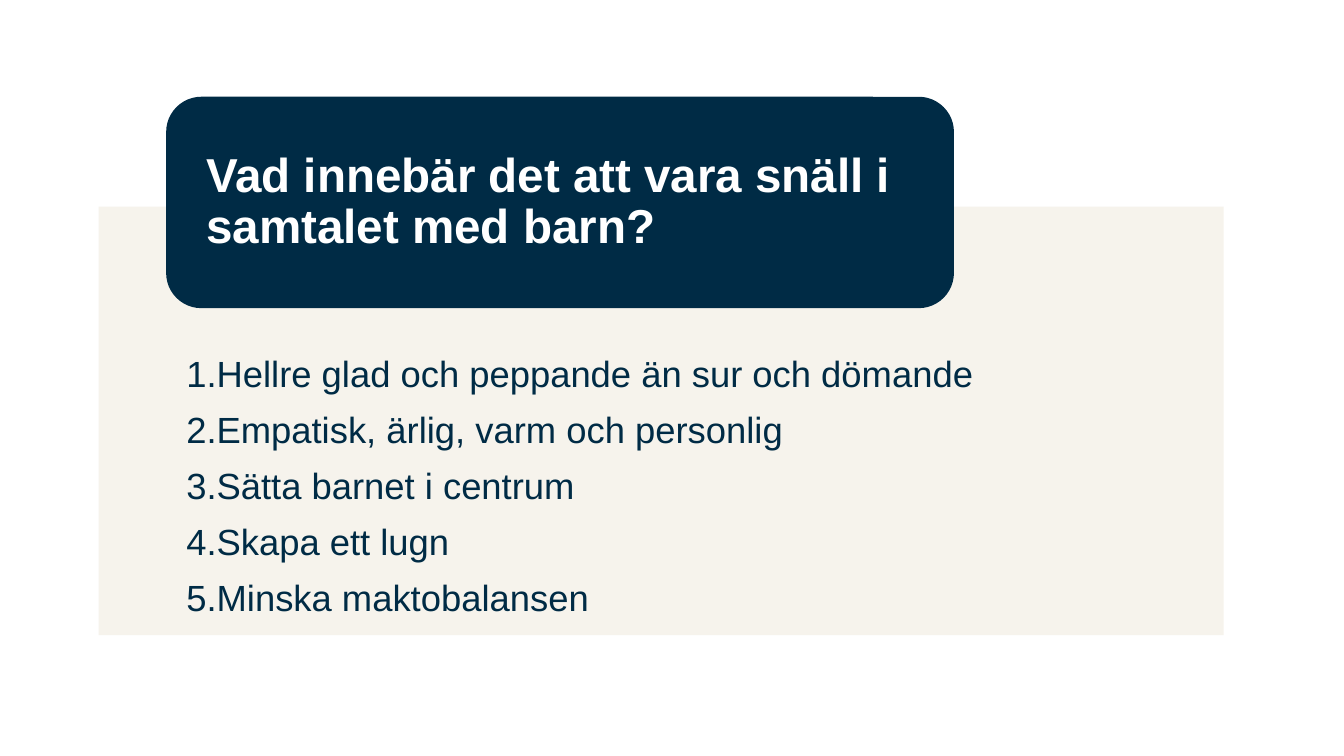
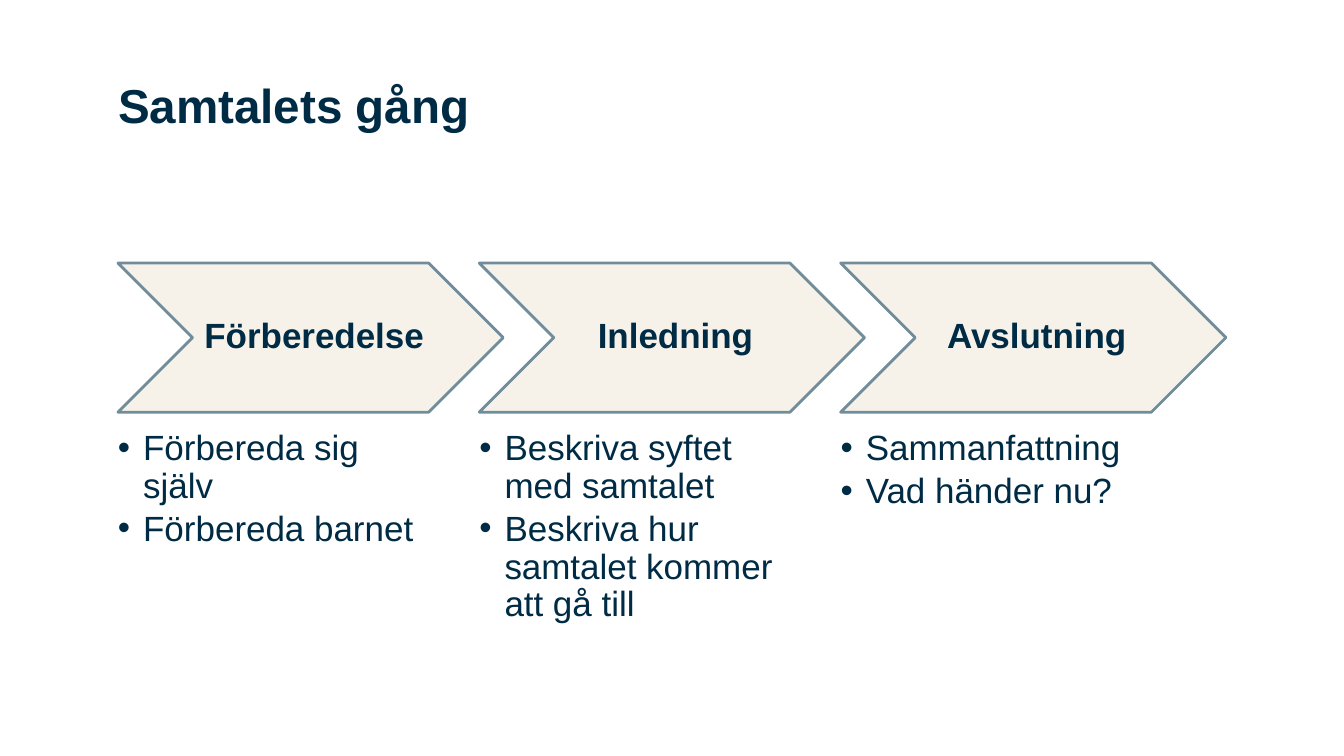
from lxml import etree
from pptx import Presentation
from pptx.dml.color import RGBColor
from pptx.enum.shapes import MSO_SHAPE
from pptx.enum.text import MSO_ANCHOR, PP_ALIGN
from pptx.oxml.ns import qn
from pptx.util import Pt

RECT, ROUND, CHEVRON = MSO_SHAPE.RECTANGLE, MSO_SHAPE.ROUNDED_RECTANGLE, MSO_SHAPE.CHEVRON
TOP, MIDDLE = MSO_ANCHOR.TOP, MSO_ANCHOR.MIDDLE
LEFT, CENTER = PP_ALIGN.LEFT, PP_ALIGN.CENTER

# Shared style
FONT = "Arial"
NAVY, CREAM, STEEL, WHITE = "002B45", "F6F2EA", "718C9A", "FFFFFF"
TITLE = {"size": 34, "bold": True}
INDENT = 18

POINTS = [
    "Hellre glad och peppande än sur och dömande",
    "Empatisk, ärlig, varm och personlig",
    "Sätta barnet i centrum",
    "Skapa ett lugn",
    "Minska maktobalansen",
]
STEPS = [
    ("Förberedelse", ["Förbereda sig själv", "Förbereda barnet"]),
    ("Inledning", ["Beskriva syftet med samtalet",
                   "Beskriva hur samtalet kommer att gå till"]),
    ("Avslutning", ["Sammanfattning", "Vad händer nu?"]),
]


def color(code):
    return RGBColor.from_string(code)


def add_mark(para, tag, **attrs):
    """Give a paragraph a hanging bullet or number."""
    props = para._p.get_or_add_pPr()
    props.set("marL", str(Pt(INDENT)))
    props.set("indent", str(-Pt(INDENT)))
    etree.SubElement(props, qn("a:buFont")).set("typeface", FONT)
    etree.SubElement(props, qn(tag), attrs)


def write(shape, lines, size, ink=NAVY, bold=False, align=LEFT, anchor=TOP,
          inset=(0, 0, 0, 0), lead=0.9, after=0, mark=None):
    frame = shape.text_frame
    frame.word_wrap = True
    frame.vertical_anchor = anchor
    (frame.margin_left, frame.margin_top,
     frame.margin_right, frame.margin_bottom) = map(Pt, inset)
    for i, line in enumerate(lines):
        para = frame.add_paragraph() if i else frame.paragraphs[0]
        para.text = line
        if mark:
            add_mark(para, **mark)
        para.alignment = align
        para.line_spacing = lead
        para.space_after = Pt(after)
        font = para.font
        font.name, font.size, font.bold = FONT, Pt(size), bold
        font.color.rgb = color(ink)


def add_box(slide, kind, area, fill, line=None):
    shape = slide.shapes.add_shape(kind, *map(Pt, area))
    shape.shadow.inherit = False
    shape.fill.solid()
    shape.fill.fore_color.rgb = color(fill)
    if line:
        shape.line.color.rgb = color(line)
        shape.line.width = Pt(2)
    else:
        shape.line.fill.background()
    return shape


def add_text(slide, area, lines, **style):
    write(slide.shapes.add_textbox(*map(Pt, area)), lines, **style)


def fade(shape, percent):
    """Set the opacity of a solid fill."""
    tone = shape._element.spPr.find(qn("a:solidFill"))[0]
    etree.SubElement(tone, qn("a:alpha")).set("val", str(percent * 1000))


def build_kind(slide):
    # Panel with numbered points
    panel = add_box(slide, RECT, (70.5, 147.6, 803.5, 306), CREAM)
    fade(panel, 90)
    write(panel, POINTS, 26, inset=(62.6, 106.6, 62.6, 14.4), after=12,
          mark={"tag": "a:buAutoNum", "type": "arabicPeriod"})
    # Title plate over the panel
    plate = add_box(slide, ROUND, (118.7, 69.1, 562.7, 151), NAVY)
    write(plate, ["Vad innebär det att vara snäll i samtalet med barn?"],
          ink=WHITE, anchor=MIDDLE, inset=(21.3, 0, 21.3, 0), **TITLE)


def build_flow(slide):
    left, step = 84.3, 258.1
    add_text(slide, (left, 54, 730, 102), ["Samtalets gång"], lead=1, **TITLE)
    # Chevrons, each with its list below
    for i, (name, items) in enumerate(STEPS):
        x = left + i * step
        arrow = add_box(slide, CHEVRON, (x, 187.9, 275.2, 106.5), CREAM, STEEL)
        write(arrow, [name], 25, bold=True, align=CENTER, anchor=MIDDLE,
              inset=(8, 3, 3, 3))
        add_text(slide, (x, 307.4, 220.3, 134), items, size=25, after=3.75,
                 mark={"tag": "a:buChar", "char": "•"})


def main():
    deck = Presentation()
    deck.slide_width, deck.slide_height = Pt(960), Pt(540)
    blank = deck.slide_layouts[6]
    for build in (build_kind, build_flow):
        build(deck.slides.add_slide(blank))
    deck.save("out.pptx")


if __name__ == "__main__":
    main()
